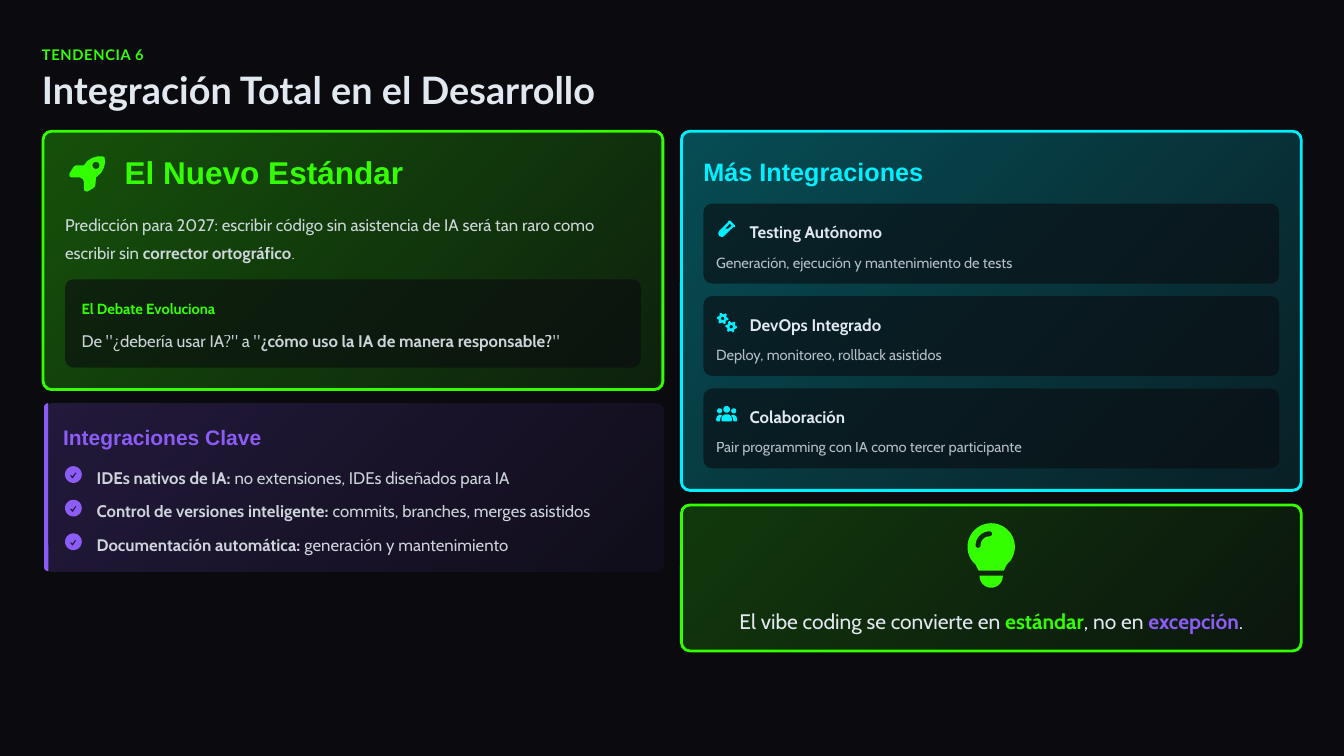
from math import cos, radians, sin

from lxml import etree
from pptx import Presentation
from pptx import util as u
from pptx.dml.color import RGBColor
from pptx.enum import shapes, text
from pptx.oxml.ns import qn

NIGHT = RGBColor(0x0A, 0x0A, 0x0F)
SILVER = RGBColor(0xE2, 0xE8, 0xF0)
GREEN = RGBColor(0x33, 0xFF, 0x00)
CYAN = RGBColor(0x00, 0xF0, 0xFF)
VIOLET = RGBColor(0x8B, 0x5C, 0xF6)
HUNDREDTH = 0.72  # points in a hundredth of an inch, the unit of the icons


def arc(x, y, radius, start, end, steps=16):
    """Points along an arc; angles run clockwise from the right."""
    angles = [radians(start + (end - start) * i / steps) for i in range(steps + 1)]
    return [(x + radius * cos(a), y + radius * sin(a)) for a in angles]


def circle(x, y, radius):
    return arc(x, y, radius, 0, 360, 28)


def gear(x, y):
    """Six-toothed wheel outline."""
    return [(x + radius * cos(radians(15 * i)), y + radius * sin(radians(15 * i)))
            for i, radius in enumerate([5.8, 5.8, 4.2, 4.2] * 6)]


def mirror(points, width):
    return [(width - x, y) for x, y in points]


SIDE_BODY = [(0, 14), (1, 11), (3.5, 9.3), (6, 10), (4.3, 12.5), (3.7, 16), (0.7, 16)]
ROCKET = [
    [(2, 24), (0.5, 23), (0, 20.5), (4, 14), (5.5, 12.5), (7, 12), (14.5, 12),
     (18, 7.5), (23, 4.5), (28, 3), (33, 3), (35, 4), (35.5, 9), (34.5, 14),
     (31.5, 19.5), (26.5, 24), (26, 31), (25.5, 33), (24, 34.5), (18, 38),
     (15.5, 37.5), (14.5, 36), (14.5, 28.5), (13.5, 25.5), (10.5, 24)],
    circle(26.5, 12, 3.5)]
CHECK = [circle(8.3, 8.3, 8.3),
         [(10.5, 6), (11.3, 6.8), (7.8, 12), (7, 12), (5, 9.3), (5.8, 8.6), (7.3, 10)]]
TEST_TUBE = [
    [(12, 0), (10.2, 0.3), (9.8, 1.7), (1, 10.5), (0, 13), (1.2, 15.5), (4, 16.5),
     (6, 15.3), (15, 6.5), (16.5, 6.5), (16.7, 5)],
    [(7, 8), (11.5, 3.2), (13.5, 5.2), (10, 8)]]
GEARS = [gear(15, 13.7), circle(15, 13.7, 1.7), gear(6.5, 5.5), circle(6.5, 5.5, 1.7)]
PEOPLE = [circle(10.5, 4, 3.3), circle(3.5, 5.5, 2.5), circle(17.5, 5.5, 2.5),
          SIDE_BODY, mirror(SIDE_BODY, 21),
          [(5.2, 14), (6, 11), (8.5, 9), (12.5, 9), (15, 11), (15.8, 14),
           (15.3, 16), (5.7, 16)]]
BULB = [
    arc(23.5, 23.5, 23.5, 145, 395, 36) + [(39, 41), (36, 47), (11, 47), (8, 41)],
    [(12, 52), (35, 52)] + arc(23.5, 52.5, 11.5, 0, 180),
    arc(22, 22, 14, 180, 270) + arc(22, 10.5, 2.5, -90, 90)
    + arc(22, 22, 9, 270, 180) + arc(10.5, 22, 2.5, 0, 180)]


def fade(element, *opacities):
    """Give the colours inside an element their opacity, in percent."""
    for colour, opacity in zip(element.iter(qn("a:srgbClr")), opacities):
        etree.SubElement(colour, qn("a:alpha")).set("val", str(opacity * 1000))


def outline(page, left, top, contours, colour, unit=HUNDREDTH):
    builder = None
    for contour in contours:
        points = [(u.Pt(x * unit), u.Pt(y * unit)) for x, y in contour]
        if builder is None:
            builder = page.shapes.build_freeform(*points[0])
        else:
            builder.move_to(*points[0])
        builder.add_line_segments(points[1:], close=True)
    shape = builder.convert_to_shape(u.Pt(left), u.Pt(top))
    shape.shadow.inherit = False
    shape.fill.solid()
    shape.fill.fore_color.rgb = colour
    shape.line.fill.background()


def panel(page, box, colour, opacities, border=False):
    """Rounded card; two opacities make a diagonal gradient."""
    shape = page.shapes.add_shape(shapes.MSO_SHAPE.ROUNDED_RECTANGLE, *map(u.Pt, box))
    shape.adjustments[0] = 6 / min(box[2:])
    shape.shadow.inherit = False
    if len(opacities) == 2:
        shape.fill.gradient()
        shape.fill.gradient_angle = 315
        for stop in shape.fill.gradient_stops:
            stop.color.rgb = colour
    else:
        shape.fill.solid()
        shape.fill.fore_color.rgb = colour
    fade(shape.fill._xPr, *opacities)
    if border:
        shape.line.color.rgb = colour
        shape.line.width = u.Pt(2)
    else:
        shape.line.fill.background()


def write(page, box, *spans, size=12, font="Cabin", colour=SILVER, opacity=100,
          bold=False, leading=1.3, tracking=None, align=text.PP_ALIGN.LEFT):
    """Place one paragraph; a span is a string or (string, bold, colour)."""
    frame = page.shapes.add_textbox(*map(u.Pt, box)).text_frame
    frame.word_wrap = True
    frame.vertical_anchor = text.MSO_ANCHOR.MIDDLE
    frame.margin_left = frame.margin_right = frame.margin_top = frame.margin_bottom = 0
    para = frame.paragraphs[0]
    para.alignment = align
    para.line_spacing = leading
    for span in spans:
        words, heavy, tint = (span, bold, colour) if isinstance(span, str) else span
        run = para.add_run()
        run.text = words
        run.font.name = font
        run.font.size = u.Pt(size)
        run.font.bold = heavy
        run.font.color.rgb = tint
        if opacity < 100:
            fade(run._r, opacity)
        if tracking:
            run._r.get_or_add_rPr().set("spc", str(int(tracking * 100)))


def heading(page, left, top, width):
    write(page, (left, top, width, 15), "TENDENCIA 6", size=10.5, font="Lato",
          colour=GREEN, bold=True, leading=1.2, tracking=0.5)
    write(page, (left, top + 21, width, 30.5), "Integración Total en el Desarrollo",
          size=27, font="Lato", bold=True, leading=0.9)


def standard_card(page, left, top, width, height):
    panel(page, (left, top, width, height), GREEN, (30, 10), border=True)
    outline(page, left + 18.75, top + 15.75, ROCKET, GREEN)
    write(page, (left + 58.25, top + 15.75, 300, 27), "El Nuevo Estándar", size=22.5,
          font="Arial", colour=GREEN, bold=True, leading=1)
    write(page, (left + 15.75, top + 54.5, 417, 39),
          "Predicción para 2027: escribir código sin asistencia de IA será tan raro "
          "como escribir sin ", ("corrector ortográfico", True, SILVER), ".",
          opacity=90, leading=1.4)
    panel(page, (left + 15.75, top + 105.75, width - 31.5, 63), NIGHT, (60,))
    write(page, (left + 27.5, top + 117.75, 392, 15), "El Debate Evoluciona",
          size=10.5, colour=GREEN, bold=True, leading=1.2)
    write(page, (left + 27.5, top + 138.75, 393, 18), 'De "¿debería usar IA?" a "',
          ("¿cómo uso la IA de manera responsable?", True, SILVER), '"', opacity=90)


def key_card(page, left, top, width, height):
    panel(page, (left, top, width, height), VIOLET, (20, 5))
    bar = arc(3, 3, 3, 180, 270) + arc(3, height - 3, 3, 90, 180)
    outline(page, left, top, [bar], VIOLET, unit=1)
    write(page, (left + 13.5, top + 12, 425, 21), "Integraciones Clave", size=15,
          font="Arial", colour=VIOLET, bold=True, leading=1.2)
    points = [
        ("IDEs nativos de IA:", " no extensiones, IDEs diseñados para IA"),
        ("Control de versiones inteligente:", " commits, branches, merges asistidos"),
        ("Documentación automática:", " generación y mantenimiento")]
    for i, (name, detail) in enumerate(points):
        row = top + 42 + 24 * i
        outline(page, left + 15, row + 3, CHECK, VIOLET)
        write(page, (left + 37.5, row, 390, 18), (name, True, SILVER), detail, opacity=90)


def more_card(page, left, top, width, height):
    panel(page, (left, top, width, height), CYAN, (30, 10), border=True)
    write(page, (left + 15.75, top + 15.75, 420, 24), "Más Integraciones", size=18,
          font="Arial", colour=CYAN, bold=True, leading=1.1)
    items = [
        (TEST_TUBE, 1.5, "Testing Autónomo",
         "Generación, ejecución y mantenimiento de tests"),
        (GEARS, 0, "DevOps Integrado", "Deploy, monitoreo, rollback asistidos"),
        (PEOPLE, 0, "Colaboración", "Pair programming con IA como tercer participante")]
    for i, (icon, shift, name, detail) in enumerate(items):
        x, y = left + 15.75, top + 51.75 + 66 * i
        panel(page, (x, y, width - 31.5, 57), NIGHT, (60,))
        outline(page, x + 9 + shift, y + 12, icon, CYAN)
        write(page, (x + 33, y + 9, 360, 18), name, bold=True)
        write(page, (x + 9, y + 33, 398, 15), detail, size=10.5, opacity=80, leading=1.2)


def closing_card(page, left, top, width, height):
    panel(page, (left, top, width, height), GREEN, (20, 5), border=True)
    outline(page, left + width / 2 - 17, top + 13, BULB, GREEN)
    write(page, (left + 30, top + 67, width - 60, 24.5), "El vibe coding se convierte en ",
          ("estándar", True, GREEN), ", no en ", ("excepción", True, VIOLET), ".",
          size=15, leading=1.4, align=text.PP_ALIGN.CENTER)


def main():
    deck = Presentation()
    deck.slide_width, deck.slide_height = u.Pt(960), u.Pt(540)
    page = deck.slides.add_slide(deck.slide_layouts[6])
    page.background.fill.solid()
    page.background.fill.fore_color.rgb = NIGHT
    heading(page, 30, 30, 905)
    standard_card(page, 30.75, 93.75, 442.75, 184.5)
    key_card(page, 31.5, 288, 442.5, 120)
    more_card(page, 486.75, 93.75, 442.75, 256.5)
    closing_card(page, 486.75, 360.75, 442.75, 104.25)
    deck.save("out.pptx")


if __name__ == "__main__":
    main()
